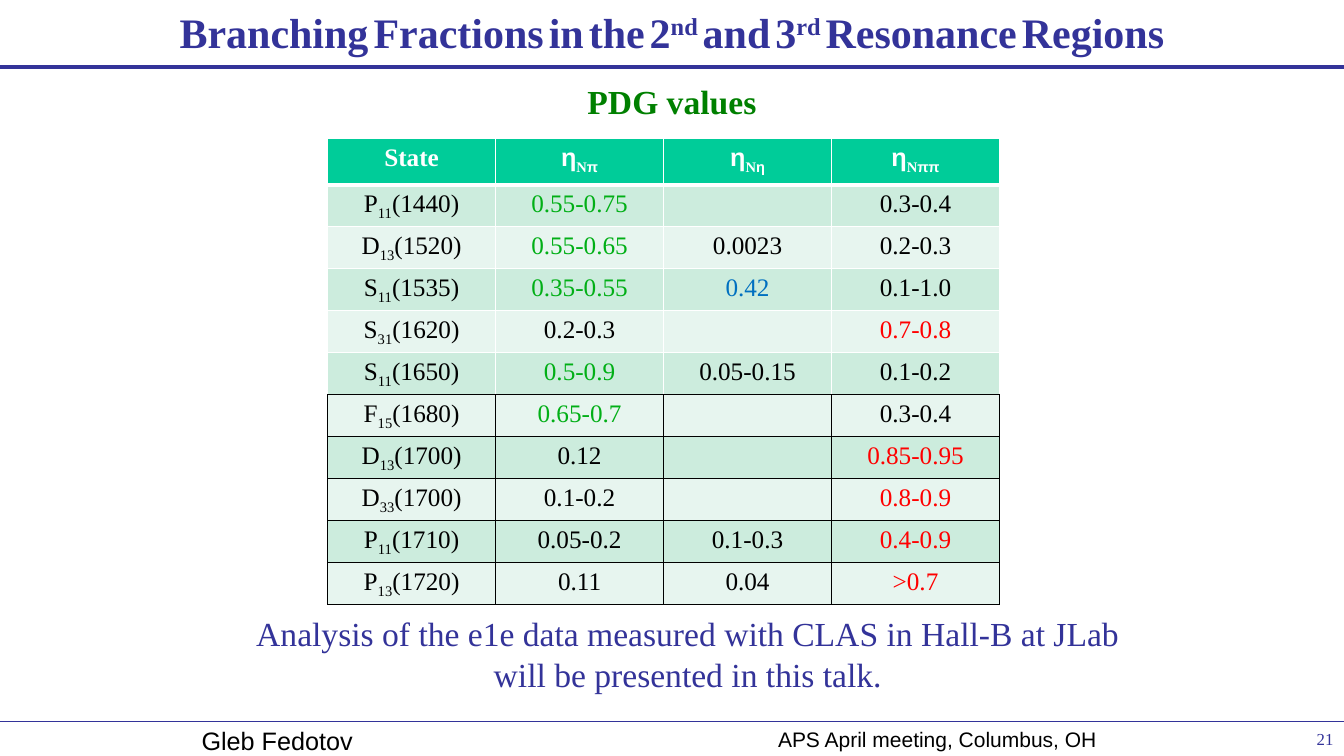
import lxml.etree
import pptx
import pptx.dml.color
import pptx.enum.shapes
import pptx.enum.text
import pptx.oxml.ns
import pptx.util

PX = 9525  # EMU per px, slide is 1280 x 720 px
SERIF, SANS = "Times New Roman", "Arial"
COLORS = {
    "navy": "333399", "heading": "008000", "black": "000000", "white": "FFFFFF",
    "header": "00CC99", "band_dark": "CCECDD", "band_light": "E7F5EF",
    "green": "01AF16", "blue": "0070C0", "red": "FF0000",
}
ALIGN = pptx.enum.text.PP_ALIGN
ANCHOR = pptx.enum.text.MSO_ANCHOR
qn = pptx.oxml.ns.qn


def add_run(paragraph, text, size, color, font=SERIF, bold=False, baseline=0):
    run = paragraph.add_run()
    run.text = text
    run.font.size = pptx.util.Pt(size)
    run.font.name = font
    run.font.bold = bold
    run.font.color.rgb = pptx.dml.color.RGBColor.from_string(COLORS[color])
    if baseline:
        run._r.get_or_add_rPr().set("baseline", str(baseline * 1000))


def add_text_box(left, top, width, height, align, inset_x=10, inset_y=5, anchor=ANCHOR.TOP):
    shape = slide.shapes.add_textbox(left * PX, top * PX, width * PX, height * PX)
    frame = shape.text_frame
    frame.word_wrap = True
    frame.vertical_anchor = anchor
    frame.margin_left = frame.margin_right = inset_x * PX
    frame.margin_top = frame.margin_bottom = inset_y * PX
    frame.paragraphs[0].alignment = align
    return frame.paragraphs[0]


presentation = pptx.Presentation()
presentation.slide_width = 1280 * PX
presentation.slide_height = 720 * PX
slide = presentation.slides.add_slide(presentation.slide_layouts[6])

# Rules above the footer and below the title
for y, weight in [(687, 0.75), (64, 3)]:
    rule = slide.shapes.add_connector(
        pptx.enum.shapes.MSO_CONNECTOR.STRAIGHT, 0, y * PX, 1280 * PX, y * PX)
    rule.line.color.rgb = pptx.dml.color.RGBColor.from_string(COLORS["navy"])
    rule.line.width = pptx.util.Pt(weight)
    lxml.etree.SubElement(rule._element.spPr, qn("a:effectLst"))

# Footer
add_run(add_text_box(1121, 689, 159, 29, ALIGN.RIGHT), "21", 12, "navy")
add_run(add_text_box(731, 687, 438, 31, ALIGN.LEFT),
        "APS April meeting, Columbus, OH", 15, "black", SANS)
add_run(add_text_box(182, 686, 222, 35, ALIGN.LEFT), "Gleb Fedotov", 18, "black", SANS)

# Table heading
heading = add_text_box(160, 56, 960, 81, ALIGN.CENTER, inset_y=0, anchor=ANCHOR.MIDDLE)
add_run(heading, "PDG values", 24, "heading", bold=True)

# Branching fractions: (wave, index, mass) and (value, color) per decay channel
channels = ["π", "η", "ππ"]
states = [
    ("P", "11", "(1440)", ("0.55-0.75", "green"), None, ("0.3-0.4", "black")),
    ("D", "13", "(1520)", ("0.55-0.65", "green"), ("0.0023", "black"), ("0.2-0.3", "black")),
    ("S", "11", "(1535)", ("0.35-0.55", "green"), ("0.42", "blue"), ("0.1-1.0", "black")),
    ("S", "31", "(1620)", ("0.2-0.3", "black"), None, ("0.7-0.8", "red")),
    ("S", "11", "(1650)", ("0.5-0.9", "green"), ("0.05-0.15", "black"), ("0.1-0.2", "black")),
    ("F", "15", "(1680)", ("0.65-0.7", "green"), None, ("0.3-0.4", "black")),
    ("D", "13", "(1700)", ("0.12", "black"), None, ("0.85-0.95", "red")),
    ("D", "33", "(1700)", ("0.1-0.2", "black"), None, ("0.8-0.9", "red")),
    ("P", "11", "(1710)", ("0.05-0.2", "black"), ("0.1-0.3", "black"), ("0.4-0.9", "red")),
    ("P", "13", "(1720)", ("0.11", "black"), ("0.04", "black"), (">0.7", "red")),
]
FIRST_BLACK_ROW = 6
row_count = len(states) + 1
table = slide.shapes.add_table(row_count, 4, 312 * PX, 132 * PX, 640 * PX, 444 * PX).table
table.first_row = table.horz_banding = False
for column in table.columns:
    column.width = 160 * PX
for index, row in enumerate(table.rows):
    row.height = (40 if index else 44) * PX

# Table text, with a slim bottom margin that leaves room for the subscripts
for cell in table.iter_cells():
    cell.margin_bottom = 0
    cell.text_frame.paragraphs[0].alignment = ALIGN.CENTER
add_run(table.cell(0, 0).text_frame.paragraphs[0], "State", 18, "white", bold=True)
for index, channel in enumerate(channels, 1):
    paragraph = table.cell(0, index).text_frame.paragraphs[0]
    add_run(paragraph, "η", 18, "white", SANS, bold=True)
    add_run(paragraph, "N", 18, "white", bold=True, baseline=-25)
    add_run(paragraph, channel, 18, "white", SANS, bold=True, baseline=-25)
for row_index, (wave, wave_index, mass, *fractions) in enumerate(states, 1):
    paragraph = table.cell(row_index, 0).text_frame.paragraphs[0]
    add_run(paragraph, wave, 18, "black")
    add_run(paragraph, wave_index, 18, "black", baseline=-25)
    add_run(paragraph, mass, 18, "black")
    for column_index, fraction in enumerate(fractions, 1):
        if fraction:
            value, color = fraction
            add_run(table.cell(row_index, column_index).text_frame.paragraphs[0],
                    value, 18, color)

# Table fills and borders: white grid above, black grid from the third-region rows on
for row_index in range(row_count):
    fill = "header" if row_index == 0 else "band_dark" if row_index % 2 else "band_light"
    edges = [("a:lnL", row_index), ("a:lnR", row_index),
             ("a:lnT", row_index), ("a:lnB", row_index + 1)]
    for cell in table.rows[row_index].cells:
        cell.fill.solid()
        cell.fill.fore_color.rgb = pptx.dml.color.RGBColor.from_string(COLORS[fill])
        properties = cell._tc.get_or_add_tcPr()
        for position, (tag, level) in enumerate(edges):
            heavy = level == 1 and position >= 2
            border = lxml.etree.Element(qn(tag), w=str(pptx.util.Pt(3 if heavy else 0.96)))
            solid = lxml.etree.SubElement(border, qn("a:solidFill"))
            edge_color = COLORS["black" if level >= FIRST_BLACK_ROW else "white"]
            lxml.etree.SubElement(solid, qn("a:srgbClr"), val=edge_color)
            properties.insert(position, border)

# Closing statement
add_run(add_text_box(220, 579, 870, 86, ALIGN.CENTER),
        "Analysis of the e1e data measured with CLAS in Hall-B at JLab "
        "will be presented in this talk.", 24, "navy")

# Title with narrow spaces and raised ordinals
title = add_text_box(160, 6, 960, 48, ALIGN.CENTER, inset_x=0, inset_y=0)
title_words = [("Branching", ""), ("Fractions", ""), ("in", ""), ("the", ""), ("2", "nd"),
               ("and", ""), ("3", "rd"), ("Resonance", ""), ("Regions", "")]
for index, (word, ordinal) in enumerate(title_words):
    if index:
        add_run(title, " ", 14, "navy", bold=True)
    add_run(title, word, 30, "navy", bold=True)
    if ordinal:
        add_run(title, ordinal, 30, "navy", bold=True, baseline=30)

presentation.save("out.pptx")
